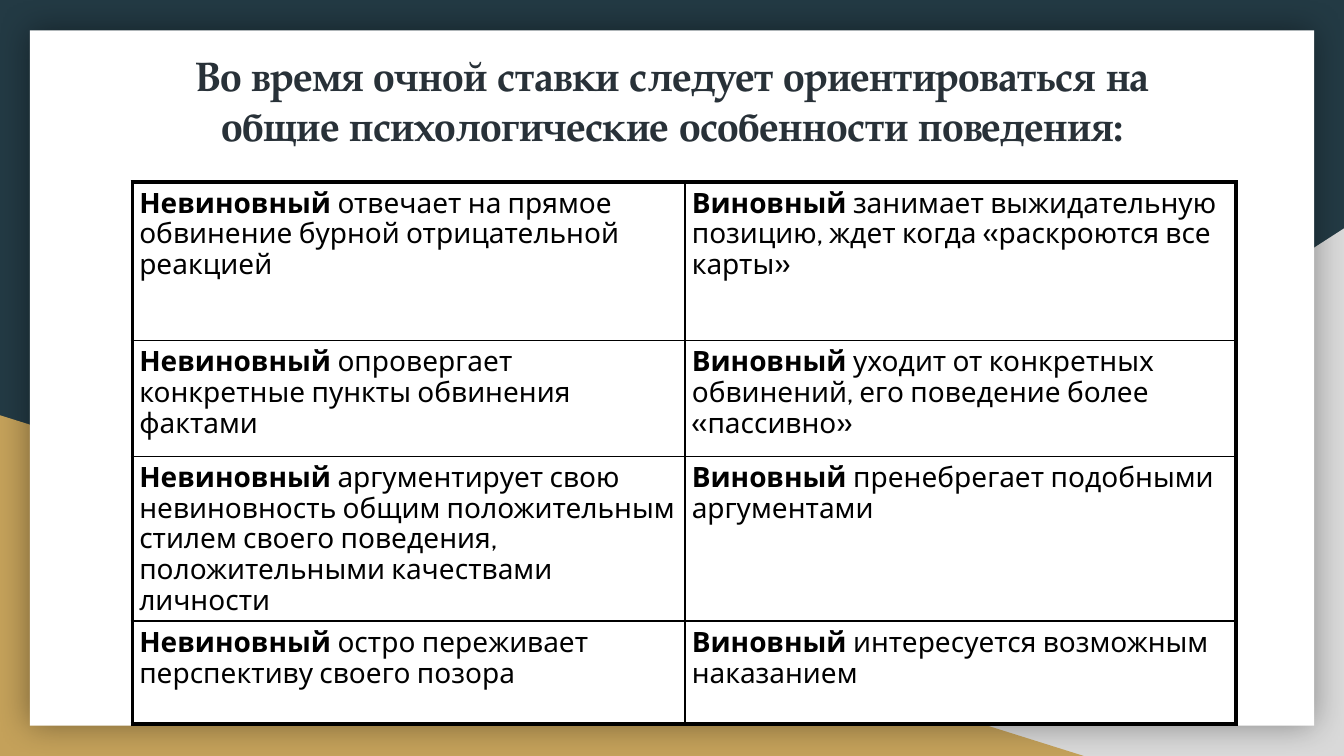
from dataclasses import dataclass

from lxml import etree
from pptx import Presentation
from pptx.dml import color, fill as fills
from pptx.enum import shapes, text
from pptx.oxml import ns
from pptx.util import Pt

INK = "000000"
THIN, THICK = 1, 2.25


@dataclass
class Wedge:
    points: list[tuple[float, float]]
    shade: str


@dataclass
class Claim:
    lead: str
    rest: str


WEDGES = [
    Wedge([(720, 405), (282, 405), (720, 122.4)], "D9D9D9"),
    Wedge([(0, 405), (580.5, 405), (0, 222.5)], "C4A15A"),
]
TITLE = ("Во время очной ставки следует ориентироваться на "
         "общие психологические особенности поведения:")
CLAIMS = [
    [Claim("Невиновный ", "отвечает на прямое обвинение бурной отрицательной реакцией"),
     Claim("Виновный", " занимает выжидательную позицию, ждет когда «раскроются все карты»")],
    [Claim("Невиновный", " опровергает конкретные пункты обвинения фактами"),
     Claim("Виновный", " уходит от конкретных обвинений, его поведение более «пассивно»")],
    [Claim("Невиновный", " аргументирует свою невиновность общим положительным стилем "
           "своего поведения, положительными качествами личности"),
     Claim("Виновный", " пренебрегает подобными аргументами")],
    [Claim("Невиновный ", "остро переживает перспективу своего позора"),
     Claim("Виновный ", "интересуется возможным наказанием")],
]
WIDTHS = [296, 295]
HEIGHTS = [85, 62, 80, 55]


def paint(fill: fills.FillFormat, shade: str) -> None:
    fill.solid()
    fill.fore_color.rgb = color.RGBColor.from_string(shade)


def add_node(base, tag: str, **attrs):
    node = etree.SubElement(base, ns.qn(tag))
    for key, value in attrs.items():
        node.set(key, str(value))
    return node


def add_run(para, words: str, face: str, size: float, shade: str, bold: bool) -> None:
    run = para.add_run()
    run.text = words
    run.font.name = face
    run.font.size = Pt(size)
    run.font.bold = bold
    paint(run.font.fill, shade)


def draw_wedge(slide, wedge: Wedge) -> None:
    start, *others = [(Pt(x), Pt(y)) for x, y in wedge.points]
    path = slide.shapes.build_freeform(*start)
    path.add_line_segments(others, close=True)
    shape = path.convert_to_shape()
    shape.shadow.inherit = False
    paint(shape.fill, wedge.shade)
    shape.line.fill.background()


def draw_sheet(slide) -> None:
    sheet = slide.shapes.add_shape(
        shapes.MSO_SHAPE.RECTANGLE, Pt(16), Pt(16.2), Pt(688), Pt(372.5))
    sheet.shadow.inherit = False
    paint(sheet.fill, "FFFFFF")
    sheet.line.fill.background()
    glow = sheet._element.spPr.find(ns.qn("a:effectLst"))
    shade = add_node(glow, "a:outerShdw", blurRad=Pt(18), dist=0, dir=0,
                     algn="ctr", rotWithShape=0)
    tint = add_node(shade, "a:srgbClr", val=INK)
    add_node(tint, "a:alpha", val=40000)


def draw_title(slide) -> None:
    frame = slide.shapes.add_textbox(Pt(65), Pt(20), Pt(591), Pt(75)).text_frame
    frame.word_wrap = True
    frame.vertical_anchor = text.MSO_ANCHOR.TOP
    frame.margin_left = frame.margin_right = Pt(7.2)
    frame.margin_top = frame.margin_bottom = Pt(7.2)
    para = frame.paragraphs[0]
    para.alignment = text.PP_ALIGN.CENTER
    add_run(para, TITLE, "TeX Gyre Pagella", 22, "283138", True)


def set_edges(cell, edges: dict[str, bool]) -> None:
    props = cell._tc.get_or_add_tcPr()
    for spot, (side, outer) in enumerate(edges.items()):
        line = add_node(props, f"a:{side}", w=Pt(THICK if outer else THIN))
        add_node(add_node(line, "a:solidFill"), "a:srgbClr", val=INK)
        props.insert(spot, line)


def fill_cell(cell, claim: Claim) -> None:
    cell.fill.background()
    cell.margin_left = cell.margin_right = Pt(3.6)
    cell.margin_top = cell.margin_bottom = Pt(3.6)
    para = cell.text_frame.paragraphs[0]
    para.space_before = Pt(4)
    para.line_spacing = 0.9
    add_run(para, claim.lead, "Cabin", 15, INK, True)
    add_run(para, claim.rest, "Cabin", 15, INK, False)


def draw_table(slide) -> None:
    rows, cols = len(HEIGHTS), len(WIDTHS)
    table = slide.shapes.add_table(
        rows, cols, Pt(71), Pt(97.5), Pt(sum(WIDTHS)), Pt(sum(HEIGHTS))).table
    table.first_row = table.horz_banding = False
    for col, width in zip(table.columns, WIDTHS):
        col.width = Pt(width)
    for r, height in enumerate(HEIGHTS):
        table.rows[r].height = Pt(height)
        for c, claim in enumerate(CLAIMS[r]):
            cell = table.cell(r, c)
            fill_cell(cell, claim)
            set_edges(cell, {"lnL": c == 0, "lnR": c == cols - 1,
                             "lnT": r == 0, "lnB": r == rows - 1})


def main() -> None:
    deck = Presentation()
    deck.slide_width, deck.slide_height = Pt(720), Pt(405)
    slide = deck.slides.add_slide(deck.slide_layouts[6])
    paint(slide.background.fill, "233A44")
    for wedge in WEDGES:
        draw_wedge(slide, wedge)
    draw_sheet(slide)
    draw_title(slide)
    draw_table(slide)
    deck.save("out.pptx")


if __name__ == "__main__":
    main()
